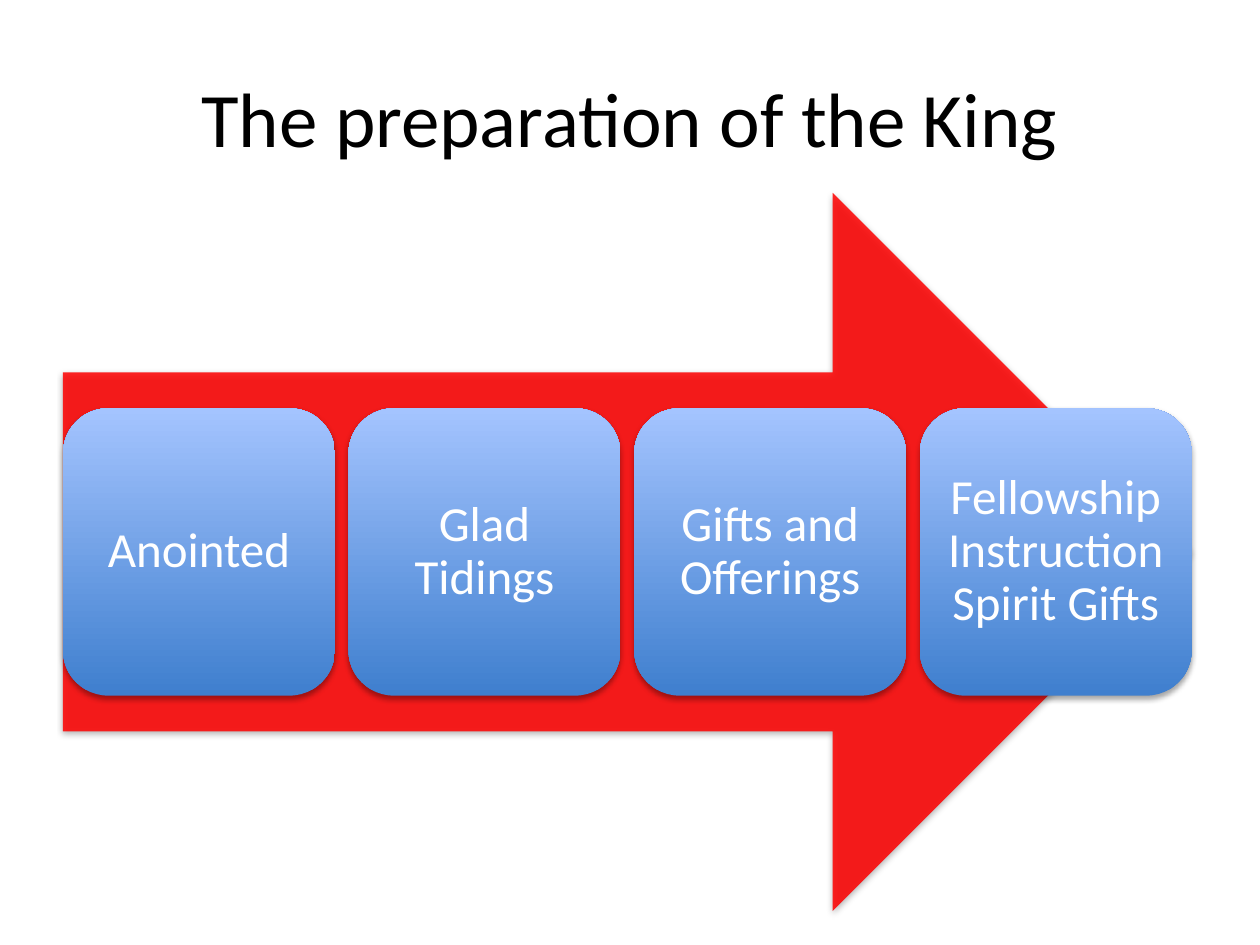
from lxml.etree import SubElement
from pptx import Presentation
from pptx.dml.color import RGBColor
from pptx.enum.shapes import MSO_SHAPE
from pptx.enum.text import MSO_ANCHOR, PP_ALIGN
from pptx.oxml.ns import qn
from pptx.util import Pt

TITLE = "The preparation of the King"
STEPS = ["Anointed", "Glad Tidings", "Gifts and Offerings",
         "Fellowship Instruction Spirit Gifts"]

THEME = {
    "font": "Calibri", "title": 44, "step": 28,
    "ink": "000000", "light": "FFFFFF", "arrow": "FF0000",
    "low": "3F7FCE", "high": "A4C4FF",
}
SIZE = (720, 540)
HEAD = (36, 21.6, 648, 90)
ARROW = (36, 110.2, 645, 410.4)
BOX = (155.4, 164.2)
INSET = 8.4


def rgb(key):
    return RGBColor.from_string(THEME[key])


def shade(shape):
    shape.line.fill.background()
    shape.shadow.inherit = False
    list_ = shape._element.spPr.find(qn("a:effectLst"))
    cast = SubElement(list_, qn("a:outerShdw"), blurRad=str(Pt(3.15)),
                      dist=str(Pt(1.8)), dir="5400000", rotWithShape="0")
    tone = SubElement(cast, qn("a:srgbClr"), val=THEME["ink"])
    SubElement(tone, qn("a:alpha"), val="35000")


def write(shape, text, size, tint, **form):
    frame = shape.text_frame
    form = {"word_wrap": True, "vertical_anchor": MSO_ANCHOR.MIDDLE, **form}
    for name, value in form.items():
        setattr(frame, name, value)
    para = frame.paragraphs[0]
    para.alignment = PP_ALIGN.CENTER
    run = para.add_run()
    run.text = text
    for name, value in {"name": THEME["font"], "size": Pt(THEME[size])}.items():
        setattr(run.font, name, value)
    run.font.color.rgb = rgb(tint)
    return para


def add_arrow(shapes):
    arrow = shapes.add_shape(MSO_SHAPE.RIGHT_ARROW, *map(Pt, ARROW))
    arrow.fill.solid()
    arrow.fill.fore_color.rgb = rgb("arrow")
    tone = arrow._element.spPr.find(qn("a:solidFill"))[0]
    SubElement(tone, qn("a:alpha"), val="85000")
    shade(arrow)


def add_steps(shapes):
    left, top, width, height = ARROW
    wide, tall = BOX
    pitch = (width - wide) / (len(STEPS) - 1)
    sides = ("left", "top", "right", "bottom")
    form = {f"margin_{side}": Pt(INSET) for side in sides}
    for i, text in enumerate(STEPS):
        place = (left + i * pitch, top + (height - tall) / 2, wide, tall)
        box = shapes.add_shape(MSO_SHAPE.ROUNDED_RECTANGLE, *map(Pt, place))
        box.fill.gradient()
        box.fill.gradient_angle = 90
        for stop, key in zip(box.fill.gradient_stops, ("low", "high")):
            stop.color.rgb = rgb(key)
        shade(box)
        write(box, text, "step", "light", **form).line_spacing = 0.9


def main():
    """Build the slide with a title and four steps on a wide arrow."""
    deck = Presentation()
    deck.slide_width, deck.slide_height = map(Pt, SIZE)
    shapes = deck.slides.add_slide(deck.slide_layouts[6]).shapes
    write(shapes.add_textbox(*map(Pt, HEAD)), TITLE, "title", "ink")
    add_arrow(shapes)
    add_steps(shapes)
    deck.save("out.pptx")


if __name__ == "__main__":
    main()
